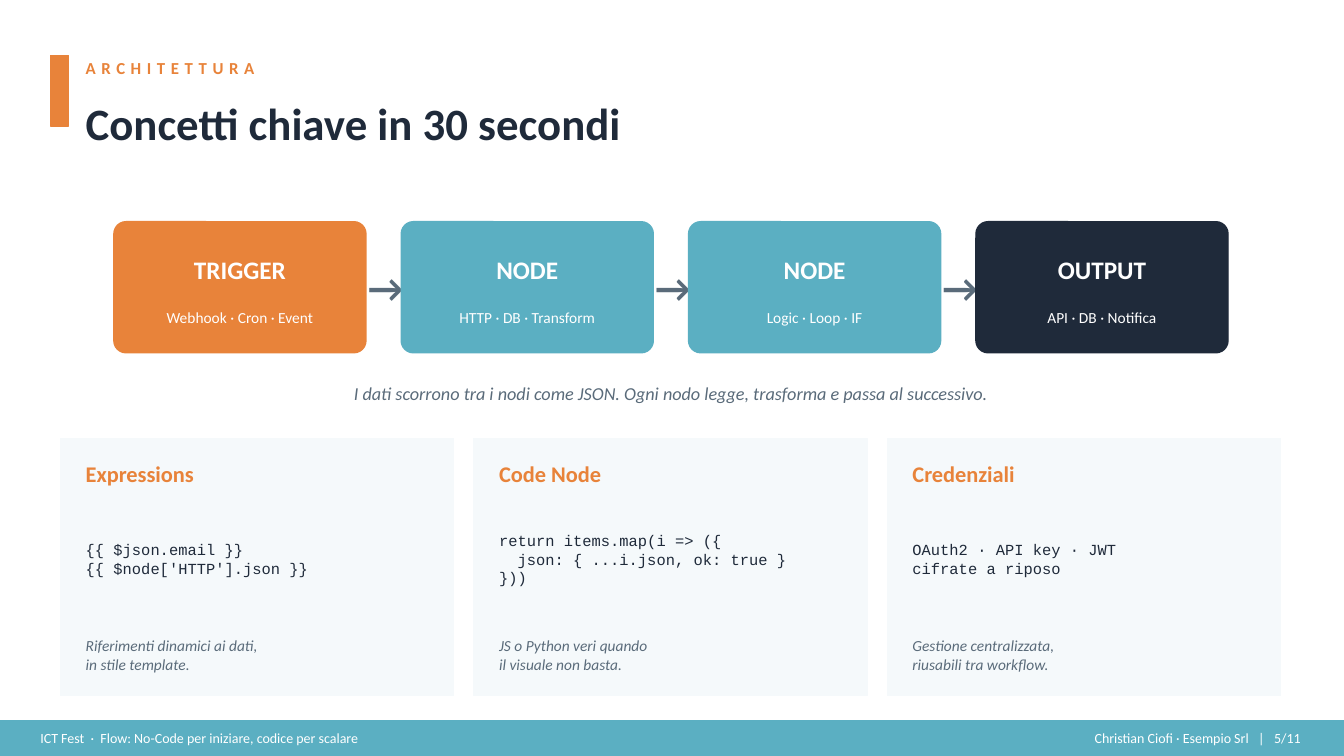
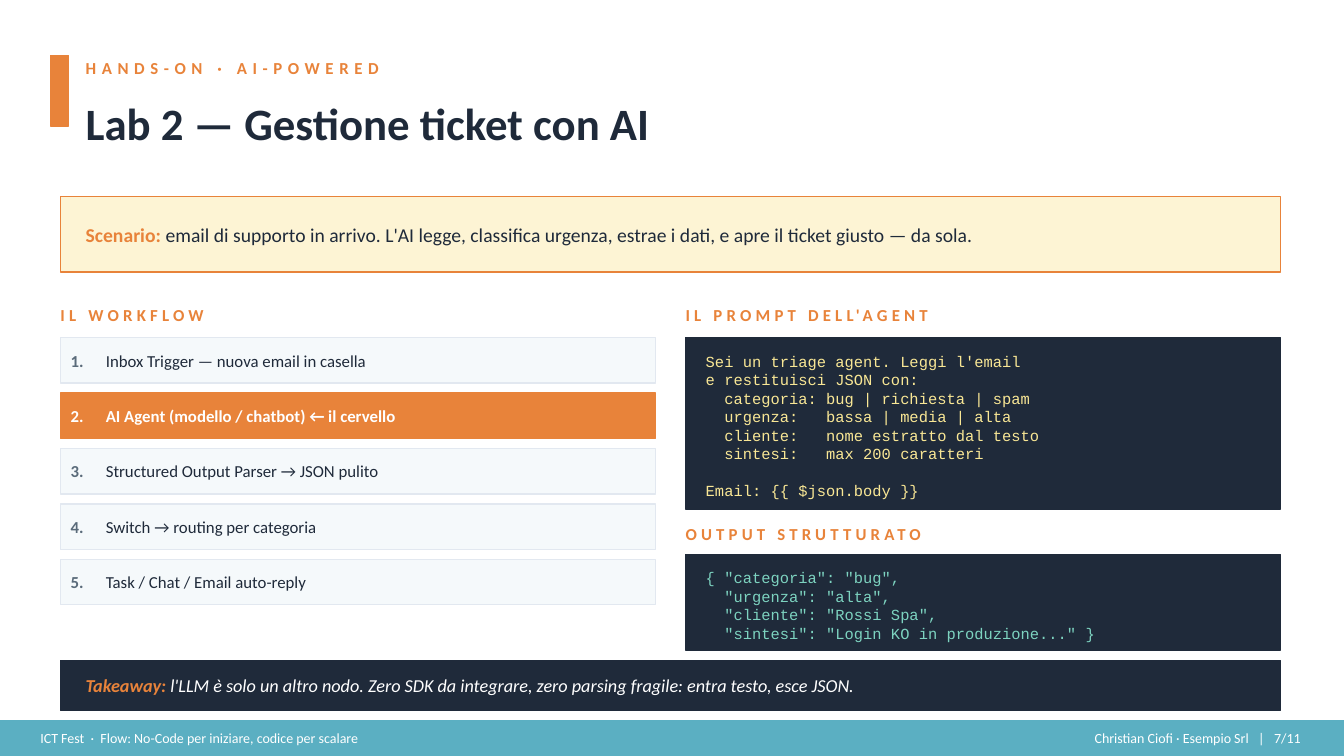
from dataclasses import dataclass

from pptx import Presentation
from pptx.dml.color import RGBColor
from pptx.enum.shapes import MSO_SHAPE as Shape
from pptx.enum.text import MSO_ANCHOR as Anchor, PP_ALIGN as Align
from pptx.util import Inches, Pt


@dataclass(frozen=True)
class Theme:
    # Colours
    orange: str = "E8833A"
    teal: str = "5BAFC2"
    navy: str = "1F2A3A"
    slate: str = "5A6B7A"
    pale: str = "F5F9FB"
    rule: str = "E2E8F0"
    cream: str = "FDF4D4"
    yellow: str = "F9E795"
    mint: str = "7DD3C0"
    white: str = "FFFFFF"
    # Fonts
    sans: str = "Calibri"
    mono: str = "Courier New"
    # Type sizes
    title: int = 32
    arrow: int = 28
    stage: int = 18
    card: int = 16
    scenario: int = 14
    lead: int = 13
    body: int = 12
    small: int = 11
    footer: int = 10
    code_line: int = 13


T = Theme()
MARGIN, CONTENT_WIDTH = 0.6, 12.1


class Deck:
    """Holds the presentation, its style and the current slide."""

    def __init__(self):
        self.prs = Presentation()
        self.prs.slide_width = Inches(13.33)
        self.prs.slide_height = Inches(7.5)
        self.slide = None

    def new_slide(self, kicker, title, number):
        self.slide = self.prs.slides.add_slide(self.prs.slide_layouts[6])
        self.panel((0.5, 0.55, 0.18, 0.7), T.orange)
        self.kicker((0.85, 0.5, 10, 0.35), kicker, spacing=4)
        self.label((0.85, 0.82, 12, 0.8), title, T.title, T.navy, bold=True)
        self.footer(number)

    def panel(self, at, fill, line=None, radius=None):
        kind = Shape.RECTANGLE if radius is None else Shape.ROUNDED_RECTANGLE
        panel = self.slide.shapes.add_shape(kind, *map(Inches, at))
        panel.shadow.inherit = False
        panel.fill.solid()
        panel.fill.fore_color.rgb = RGBColor.from_string(fill)
        panel.line.color.rgb = RGBColor.from_string(line or fill)
        panel.line.width = Pt(1)
        if radius is not None:
            panel.adjustments[0] = radius / min(at[2:])

    def frame(self, at):
        frame = self.slide.shapes.add_textbox(*map(Inches, at)).text_frame
        frame.word_wrap = True
        frame.vertical_anchor = Anchor.MIDDLE
        frame.margin_left = frame.margin_right = 0
        frame.margin_top = frame.margin_bottom = 0
        return frame

    def run(self, paragraph, text, size, color, font=T.sans,
            bold=False, italic=False, spacing=None):
        run = paragraph.add_run()
        run.text = text
        run.font.name = font
        run.font.size = Pt(size)
        run.font.bold = bold
        run.font.italic = italic
        run.font.color.rgb = RGBColor.from_string(color)
        if spacing is not None:
            run._r.get_or_add_rPr().set("spc", str(round(spacing * 100)))

    def label(self, at, text, size, color, align=Align.LEFT, **style):
        """Text with one paragraph per line; an empty line becomes a gap."""
        frame = self.frame(at)
        paragraph, gap = frame.paragraphs[0], False
        for index, line in enumerate(text.split("\n")):
            if not line:
                gap = True
                continue
            if index:
                paragraph = frame.add_paragraph()
            if gap:
                paragraph.space_before = Pt(T.code_line)
                gap = False
            paragraph.alignment = align
            self.run(paragraph, line, size, color, **style)

    def kicker(self, at, text, spacing=3):
        self.label(at, text, T.body, T.orange, bold=True, spacing=spacing)

    def code(self, at, text, color):
        self.label(at, text, T.small, color, font=T.mono)

    def callout(self, at, lead, text, size, color, italic=False):
        paragraph = self.frame(at).paragraphs[0]
        self.run(paragraph, lead, size, T.orange, bold=True, italic=italic)
        self.run(paragraph, text, size, color, italic=italic)

    def footer(self, number):
        self.panel((0, 7.15, 13.33, 0.35), T.teal)
        event = self.frame((0.4, 7.15, 9, 0.35)).paragraphs[0]
        author = self.frame((8.9, 7.15, 4, 0.35)).paragraphs[0]
        author.alignment = Align.RIGHT
        # Letter spacing widens the gaps around the separators
        for paragraph, before, mark, after, spacing in (
            (event, "ICT Fest", " ·",
             " Flow: No-Code per iniziare, codice per scalare", 2.25),
            (author, "Christian Ciofi · Esempio Srl", " |",
             f" {number}/11", 4.5),
        ):
            self.run(paragraph, before, T.footer, T.white)
            self.run(paragraph, mark, T.footer, T.white, spacing=spacing)
            self.run(paragraph, after, T.footer, T.white)

    def stage(self, left, name, examples, fill):
        self.panel((left, 2.2, 2.5, 1.3), fill, radius=0.12)
        self.label((left, 2.45, 2.5, 0.45), name, T.stage, T.white,
                   Align.CENTER, bold=True)
        self.label((left + 0.1, 2.92, 2.3, 0.45), examples, T.small, T.white,
                   Align.CENTER)

    def card(self, left, heading, snippet, note):
        self.panel((left, 4.35, 3.9, 2.55), T.pale)
        inner = left + 0.25
        self.label((inner, 4.5, 3.5, 0.4), heading, T.card, T.orange, bold=True)
        self.code((inner, 4.97, 3.5, 1.15), snippet, T.navy)
        self.label((inner, 6.17, 3.5, 0.65), note, T.small, T.slate, italic=True)

    def step(self, top, number, text, active):
        fill, line = (T.orange, T.orange) if active else (T.pale, T.rule)
        self.panel((MARGIN, top, 5.9, 0.45), fill, line)
        self.label((0.7, top, 0.35, 0.45), f"{number}.", T.body,
                   T.white if active else T.slate, bold=True)
        self.label((1.05, top, 4.8, 0.45), text, T.body,
                   T.white if active else T.navy, bold=active)


STAGES = [
    ("TRIGGER", "Webhook · Cron · Event", T.orange),
    ("NODE", "HTTP · DB · Transform", T.teal),
    ("NODE", "Logic · Loop · IF", T.teal),
    ("OUTPUT", "API · DB · Notifica", T.navy),
]

CARDS = [
    ("Expressions",
     "{{ $json.email }}\n{{ $node['HTTP'].json }}",
     "Riferimenti dinamici ai dati,\nin stile template."),
    ("Code Node",
     "return items.map(i => ({\n  json: { ...i.json, ok: true }\n}))",
     "JS o Python veri quando\nil visuale non basta."),
    ("Credenziali",
     "OAuth2 · API key · JWT\ncifrate a riposo",
     "Gestione centralizzata,\nriusabili tra workflow."),
]

STEPS = [
    "Inbox Trigger — nuova email in casella",
    "AI Agent (modello / chatbot) ← il cervello",
    "Structured Output Parser → JSON pulito",
    "Switch → routing per categoria",
    "Task / Chat / Email auto-reply",
]
ACTIVE_STEP = 2

PROMPT = """Sei un triage agent. Leggi l'email
e restituisci JSON con:
  categoria: bug | richiesta | spam
  urgenza:   bassa | media | alta
  cliente:   nome estratto dal testo
  sintesi:   max 200 caratteri

Email: {{ $json.body }}"""

OUTPUT = """{ "categoria": "bug",
  "urgenza": "alta",
  "cliente": "Rossi Spa",
  "sintesi": "Login KO in produzione..." }"""


def concepts_slide(deck):
    deck.new_slide("ARCHITETTURA", "Concetti chiave in 30 secondi", 5)

    # Flow from trigger to output
    for index, stage in enumerate(STAGES):
        left = 1.13 + index * 2.85
        if index:
            deck.label((left - 0.33, 2.5, 0.31, 0.7), "→", T.arrow, T.slate,
                       Align.CENTER, bold=True)
        deck.stage(left, *stage)
    deck.label(
        (MARGIN, 3.7, CONTENT_WIDTH, 0.4),
        "I dati scorrono tra i nodi come JSON. "
        "Ogni nodo legge, trasforma e passa al successivo.",
        T.lead, T.slate, Align.CENTER, italic=True)

    # Concept cards
    for index, card in enumerate(CARDS):
        deck.card(MARGIN + index * 4.1, *card)


def lab_slide(deck):
    deck.new_slide("HANDS-ON · AI-POWERED", "Lab 2 — Gestione ticket con AI", 7)

    # Scenario
    deck.panel((MARGIN, 1.95, CONTENT_WIDTH, 0.75), T.cream, T.orange)
    deck.callout(
        (0.85, 2, 11.7, 0.65), "Scenario: ",
        "email di supporto in arrivo. L'AI legge, classifica urgenza, "
        "estrae i dati, e apre il ticket giusto — da sola.",
        T.scenario, T.navy)

    # Workflow steps
    deck.kicker((MARGIN, 2.95, 5.8, 0.35), "IL WORKFLOW")
    for number, text in enumerate(STEPS, start=1):
        deck.step(3.35 + (number - 1) * 0.55, number, text,
                  active=number == ACTIVE_STEP)

    # Agent prompt and structured output
    deck.kicker((6.8, 2.95, 6, 0.35), "IL PROMPT DELL'AGENT")
    deck.panel((6.8, 3.35, 5.9, 1.7), T.navy)
    deck.code((7, 3.45, 5.6, 1.55), PROMPT, T.yellow)
    deck.kicker((6.8, 5.15, 6, 0.3), "OUTPUT STRUTTURATO")
    deck.panel((6.8, 5.5, 5.9, 0.95), T.navy)
    deck.code((7, 5.58, 5.6, 0.85), OUTPUT, T.mint)

    # Takeaway
    deck.panel((MARGIN, 6.55, CONTENT_WIDTH, 0.5), T.navy)
    deck.callout(
        (0.85, 6.55, 11.8, 0.5), "Takeaway: ",
        "l'LLM è solo un altro nodo. Zero SDK da integrare, "
        "zero parsing fragile: entra testo, esce JSON.",
        T.lead, T.white, italic=True)


def main():
    deck = Deck()
    concepts_slide(deck)
    lab_slide(deck)
    deck.prs.save("out.pptx")


if __name__ == "__main__":
    main()
